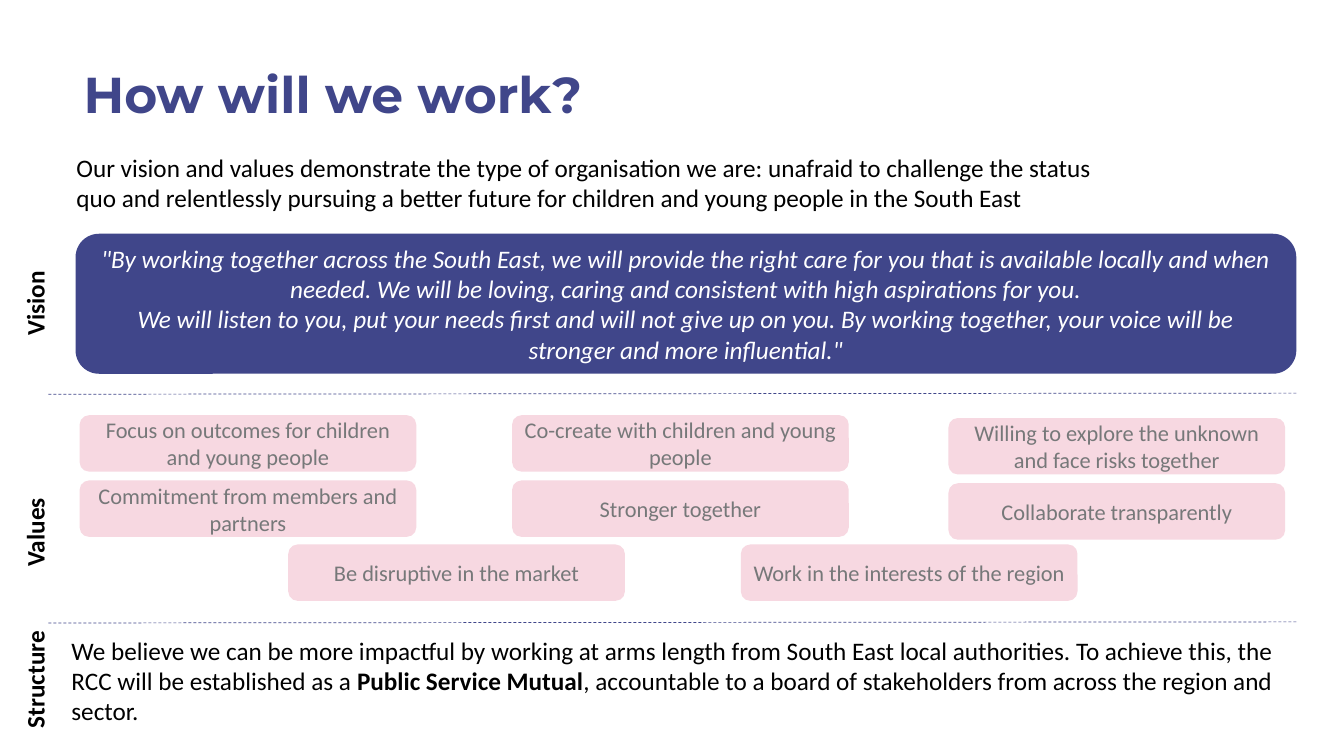
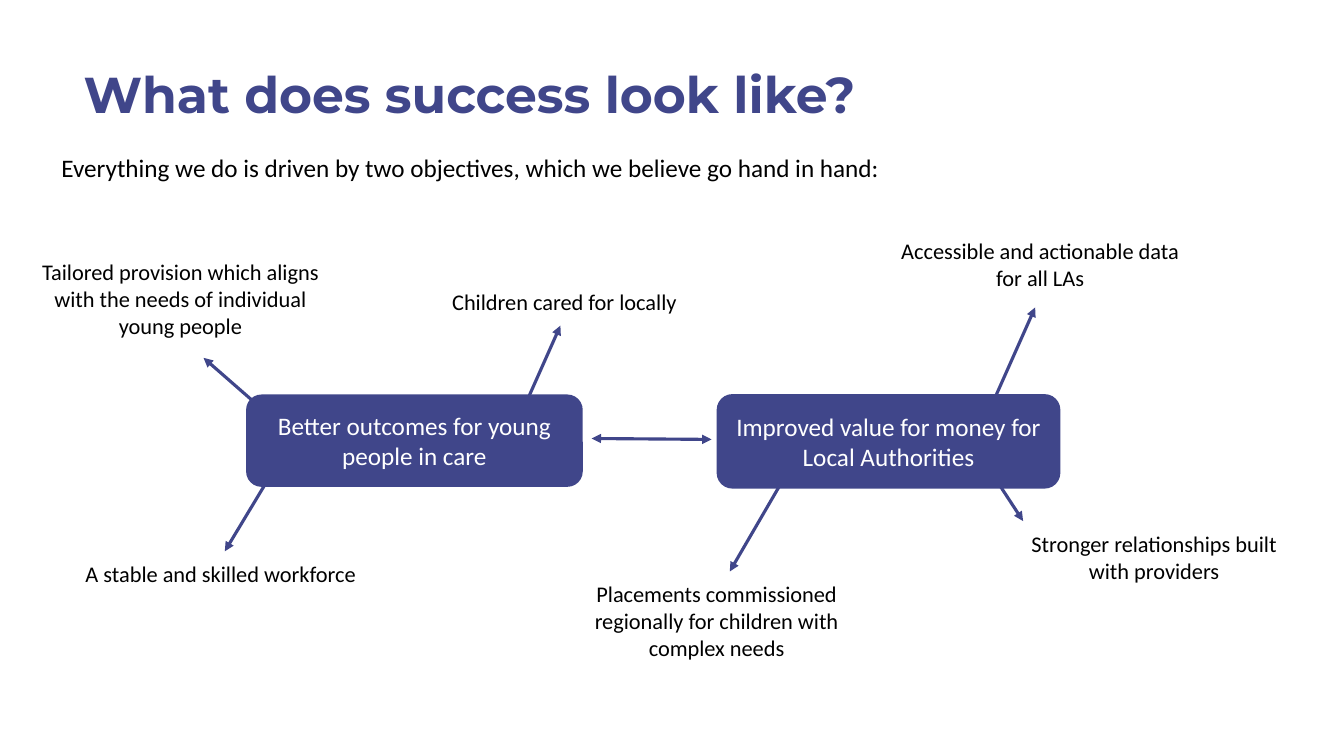
"""Build two slides on ways of working and on success."""
import pptx
import pptx.dml.color
import pptx.enum.dml
import pptx.enum.shapes
import pptx.enum.text
import pptx.oxml
import pptx.oxml.ns
import pptx.util

Pt = pptx.util.Pt
RGB = pptx.dml.color.RGBColor
KIND = pptx.enum.shapes.MSO_SHAPE
ALIGN = pptx.enum.text.PP_ALIGN
ANCHOR = pptx.enum.text.MSO_ANCHOR
DASH = pptx.enum.dml.MSO_LINE.DASH

NAVY = RGB(0x40, 0x46, 0x8A)
PINK = RGB(0xF7, 0xD8, 0xE1)
GREY = RGB(0x76, 0x78, 0x79)
WHITE = RGB(0xFF, 0xFF, 0xFF)
BLACK = RGB(0, 0, 0)

TITLES = ["How will we work?", "What does success look like?"]
INTRO = (
    "Our vision and values demonstrate the type of organisation we are: "
    "unafraid to challenge the status quo and relentlessly pursuing a better "
    "future for children and young people in the South East"
)
VISION = [
    "\"By working together across the South East, we will provide the right care "
    "for you that is available locally and when needed. We will be loving, caring "
    "and consistent with high aspirations for you.",
    "We will listen to you, put your needs first and will not give up on you. "
    "By working together, your voice will be stronger and more influential.\"",
]
BELIEF = [[
    ("We believe we can be more impactful by working at arms length from South East "
     "local authorities. To achieve this, the RCC will be established as a ", False),
    ("Public Service Mutual", True),
    (", accountable to a board of stakeholders from across the region and sector.",
     False),
]]
SIDES = [("Vision", 202.3), ("Values", 365.8), ("Structure", 470.9)]
RULES = [281.2, 444.6]
VALUE_W, VALUE_H, VALUE_STEP = 240.5, 40.3, 46.6
VALUES = [
    (56.9, 296.6, ["Focus on outcomes for children and young people",
                   "Commitment from members and partners"]),
    (365.8, 296.6, ["Co-create with children and young people",
                    "Stronger together"]),
    (677.5, 298.6, ["Willing to explore the unknown and face risks together",
                    "Collaborate transparently"]),
    (205.9, 388.9, ["Be disruptive in the market"]),
    (529.2, 388.9, ["Work in the interests of the region"]),
]

LEAD = "Everything we do is driven by two objectives, which we believe go hand in hand:"
GOALS = [
    ("Better outcomes for young people in care", (175.8, 281.8, 240.5, 66)),
    ("Improved value for money for Local Authorities", (511.9, 281.5, 245.5, 67.5)),
]
NOTE_W = 216
NOTES = [
    ("Tailored provision which aligns with the needs of individual young people",
     20.9, 180.7, 65.5),
    ("A stable and skilled workforce", 49.7, 396.3, 26.6),
    ("Children cared for locally", 295.2, 202.3, 26.6),
    ("Placements commissioned regionally for children with complex needs",
     403.9, 410.7, 65.5),
    ("Accessible and actionable data for all LAs", 635, 165.6, 46.1),
    ("Stronger relationships built with providers", 716.4, 375.1, 46.1),
]
ARROWS = [
    (710.6, 284.4, 739.4, 219.6),
    (710.6, 341.3, 730.8, 372.2),
    (560.2, 341.3, 521.3, 408.2),
    (371.5, 297.4, 400.3, 232.6),
    (191.5, 295.9, 145.4, 255.6),
    (192.2, 341.3, 160.6, 393.8),
]
BRIDGE = (422.6, 313.2, 508.3, 313.9)


def write(slide, text, box, kind=None, fill=None, size=18, font="Calibri",
          color=BLACK, bold=False, italic=False, align=ALIGN.CENTER,
          anchor=ANCHOR.MIDDLE, turn=0, space=None):
    """Add text in a box or a filled shape; text is a string or paragraphs."""
    place = [Pt(n) for n in box]
    if kind is None:
        shape = slide.shapes.add_textbox(*place)
    else:
        shape = slide.shapes.add_shape(kind, *place)
        shape.shadow.inherit = False
        shape.fill.solid()
        shape.fill.fore_color.rgb = fill
        shape.line.fill.background()
    shape.rotation = turn
    frame = shape.text_frame
    frame.word_wrap = True
    frame.vertical_anchor = anchor
    paras = [text] if isinstance(text, str) else text
    for i, para in enumerate(paras):
        par = frame.paragraphs[0] if i == 0 else frame.add_paragraph()
        par.alignment = align
        if space:
            par.line_spacing = space
        for words, strong in [(para, bold)] if isinstance(para, str) else para:
            run = par.add_run()
            run.text = words
            run.font.name = font
            run.font.size = Pt(size)
            run.font.bold = strong
            run.font.italic = italic
            run.font.color.rgb = color
    return shape


def link(slide, ends, width, dash=None, heads=()):
    """Draw a straight line with optional dash and arrowheads."""
    line = slide.shapes.add_connector(
        pptx.enum.shapes.MSO_CONNECTOR.STRAIGHT, *[Pt(n) for n in ends])
    line.line.color.rgb = NAVY
    line.line.width = Pt(width)
    if dash:
        line.line.dash_style = dash
    pen = line.line._get_or_add_ln()
    for head in heads:
        tag = pptx.oxml.ns.qn("a:" + head)
        pen.append(pen.makeelement(tag, {"type": "triangle"}))
    props = line._element.spPr
    props.append(props.makeelement(pptx.oxml.ns.qn("a:effectLst"), {}))


def start(deck, title):
    """Add a blank slide with the shared title."""
    slide = deck.slides.add_slide(deck.slide_layouts[6])
    write(slide, title, (52.6, 17.3, 828, 104.4), size=36, font="Montserrat",
          color=NAVY, bold=True, align=ALIGN.LEFT, space=0.9)
    return slide


def work(deck):
    """Build the slide on vision, values and structure."""
    slide = start(deck, TITLES[0])
    write(slide, INTRO, (47.5, 105.1, 761, 51), align=ALIGN.LEFT, anchor=ANCHOR.TOP)
    write(slide, VISION, (54, 167, 872, 100), kind=KIND.ROUNDED_RECTANGLE,
          fill=NAVY, color=WHITE, italic=True)
    for left, top, names in VALUES:
        for row, name in enumerate(names):
            write(slide, name, (left, top + row * VALUE_STEP, VALUE_W, VALUE_H),
                  kind=KIND.ROUNDED_RECTANGLE, fill=PINK, size=16, color=GREY)
    write(slide, BELIEF, (43.9, 450, 882, 72.7), kind=KIND.RECTANGLE, fill=WHITE,
          align=ALIGN.LEFT, anchor=ANCHOR.TOP)
    for top in RULES:
        link(slide, (34.6, top + 0.4, 927, top - 0.4), 0.5, dash=DASH)
    for name, top in SIDES:
        write(slide, name, (-21.2, top, 92.2, 29), bold=True, turn=270,
              anchor=ANCHOR.TOP)


def success(deck):
    """Build the slide on the two objectives and their results."""
    slide = start(deck, TITLES[1])
    write(slide, LEAD, (36.7, 105.1, 707, 29), align=ALIGN.LEFT, anchor=ANCHOR.TOP)
    for name, box in GOALS:
        write(slide, name, box, kind=KIND.ROUNDED_RECTANGLE, fill=NAVY, color=WHITE)
    for name, left, top, high in NOTES:
        write(slide, name, (left, top, NOTE_W, high), size=16, anchor=ANCHOR.TOP)
    for ends in ARROWS:
        link(slide, ends, 2.25, heads=["tailEnd"])
    link(slide, BRIDGE, 2.25, heads=["headEnd", "tailEnd"])


def main():
    """Build and save the deck."""
    deck = pptx.Presentation()
    deck.slide_width, deck.slide_height = Pt(960), Pt(540)
    work(deck)
    success(deck)
    deck.save("out.pptx")


if __name__ == "__main__":
    main()
